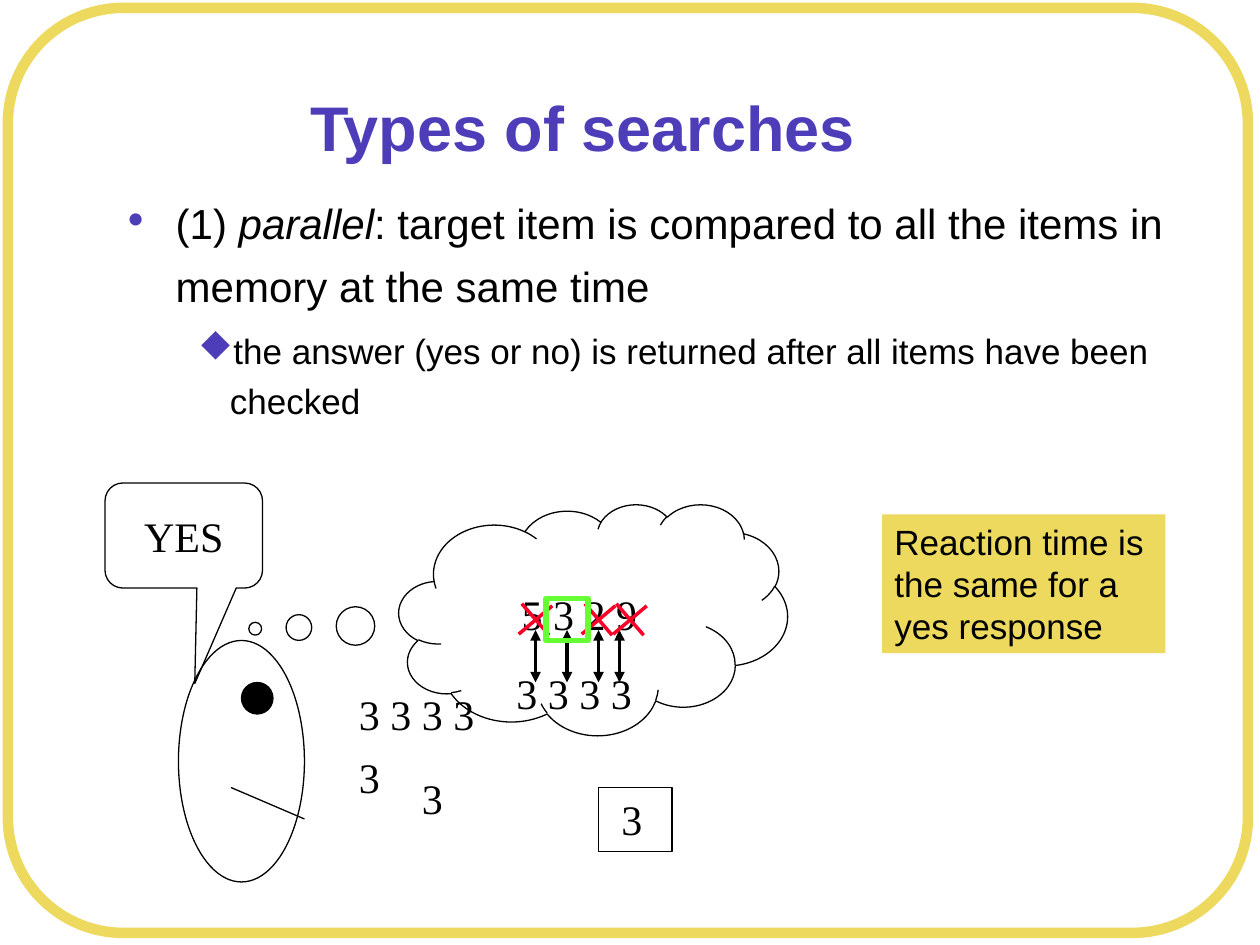
from dataclasses import dataclass

from lxml import etree
from pptx import Presentation
from pptx.dml.color import RGBColor
from pptx.enum.shapes import MSO_CONNECTOR, MSO_SHAPE
from pptx.enum.text import MSO_ANCHOR, MSO_AUTO_SIZE, PP_ALIGN
from pptx.oxml.ns import qn
from pptx.util import Inches, Pt

LEFT, CENTER = PP_ALIGN.LEFT, PP_ALIGN.CENTER
TOP, MIDDLE = MSO_ANCHOR.TOP, MSO_ANCHOR.MIDDLE
RECT, ROUND, OVAL = MSO_SHAPE.RECTANGLE, MSO_SHAPE.ROUNDED_RECTANGLE, MSO_SHAPE.OVAL
CLOUD, SPEECH = MSO_SHAPE.CLOUD_CALLOUT, MSO_SHAPE.ROUNDED_RECTANGULAR_CALLOUT
STRAIGHT = MSO_CONNECTOR.STRAIGHT

SANS, SERIF = "Arial", "Times New Roman"
SIGNS = "Wingdings"
DISC, DIAMOND = "l", "u"  # letters that the symbol font draws as ● and ⬥
COLORS = {
    "black": "000000",
    "gold": "ECD95E",
    "violet": "4E3DB9",
    "red": "FC0128",
    "green": "66FF33",
}

# The slide is a grid of 120 columns by 90 rows
WIDE, HIGH = Inches(10), Inches(7.5)
COLS, ROWS = 120, 90


@dataclass
class Box:
    col: float
    row: float
    cols: float
    rows: float


@dataclass
class Form:
    kind: int
    box: Box
    fill: str | None = None
    line: str | None = "black"
    width: float = 0.75
    adjust: tuple = ()


@dataclass
class Label:
    text: str
    size: int = 24
    font: str = SERIF
    color: str = "black"
    bold: bool = False
    align: int = LEFT
    anchor: int = TOP
    wrap: bool = False
    grow: bool = False
    lines: float = 1.0


@dataclass
class Point:
    runs: tuple  # (text, italic) pairs
    level: int
    size: int
    lines: float
    margin: float
    hang: float
    bullet: str
    share: int


def rgb(name: str) -> RGBColor:
    return RGBColor.from_string(COLORS[name])


def x_at(col: float) -> int:
    return round(WIDE * col / COLS)


def y_at(row: float) -> int:
    return round(HIGH * row / ROWS)


def place(box: Box) -> tuple:
    return x_at(box.col), y_at(box.row), x_at(box.cols), y_at(box.rows)


def draw(slide, form: Form):
    shape = slide.shapes.add_shape(form.kind, *place(form.box))
    shape.shadow.inherit = False
    for i, value in enumerate(form.adjust):
        shape.adjustments[i] = value
    if form.fill:
        shape.fill.solid()
        shape.fill.fore_color.rgb = rgb(form.fill)
    else:
        shape.fill.background()
    if form.line:
        shape.line.color.rgb = rgb(form.line)
        shape.line.width = Pt(form.width)
    else:
        shape.line.fill.background()
    return shape


def write(shape, label: Label) -> None:
    frame = shape.text_frame
    frame.word_wrap = label.wrap
    frame.vertical_anchor = label.anchor
    if label.grow:
        frame.auto_size = MSO_AUTO_SIZE.SHAPE_TO_FIT_TEXT
    para = frame.paragraphs[0]
    para.text, para.alignment = label.text, label.align
    para.line_spacing = label.lines
    font = para.font
    font.name, font.size, font.bold = label.font, Pt(label.size), label.bold
    font.color.rgb = rgb(label.color)


def note(slide, box: Box, label: Label) -> None:
    write(slide.shapes.add_textbox(*place(box)), label)


def join(slide, start: tuple, end: tuple, color: str = "black",
         width: float = 2, heads: bool = False) -> None:
    line = slide.shapes.add_connector(
        STRAIGHT, x_at(start[0]), y_at(start[1]), x_at(end[0]), y_at(end[1]))
    line.line.color.rgb = rgb(color)
    line.line.width = Pt(width)
    props = line._element.spPr
    if heads:
        for tag in ("a:headEnd", "a:tailEnd"):
            etree.SubElement(props.find(qn("a:ln")), qn(tag), type="triangle")
    etree.SubElement(props, qn("a:effectLst"))


def add_point(para, point: Point) -> None:
    for text, slant in point.runs:
        run = para.add_run()
        run.text = text
        run.font.italic = slant
    para.level = point.level
    para.line_spacing = point.lines
    para.space_before = Pt(0.3 * point.size)
    props = para._p.get_or_add_pPr()
    props.set("marL", str(Inches(point.margin)))
    props.set("indent", str(-Inches(point.hang)))
    tint = etree.SubElement(props, qn("a:buClr"))
    etree.SubElement(tint, qn("a:srgbClr"), val=COLORS["violet"])
    etree.SubElement(props, qn("a:buSzPct"), val=str(point.share * 1000))
    etree.SubElement(props, qn("a:buFont"), typeface=SIGNS, charset="2")
    etree.SubElement(props, qn("a:buChar"), char=point.bullet)
    para.font.name, para.font.size = SANS, Pt(point.size)
    para.font.color.rgb = rgb("black")


POINTS = (
    Point((("(1) ", False), ("parallel", True),
           (": target item is compared to all the items in memory at the same time", False)),
          0, 24, 1.25, 0.38, 0.38, DISC, 50),
    Point((("the answer (yes or no) is returned after all items have been checked", False),),
          1, 20, 1.2, 0.81, 0.25, DIAMOND, 100),
)


def main() -> None:
    deck = Presentation()
    deck.slide_width, deck.slide_height = WIDE, HIGH
    slide = deck.slides.add_slide(deck.slide_layouts[6])

    # Frame and thought cloud
    draw(slide, Form(ROUND, Box(0.75, 0.75, 118.1, 88.1), None, "gold", 6, (0.125,)))
    cloud = draw(slide, Form(CLOUD, Box(38, 48, 37, 22), adjust=(-0.87, 0.04)))
    write(cloud, Label("5 3 2 9", align=CENTER, anchor=MIDDLE))

    # Title and points
    note(slide, Box(11, 5, 89, 15),
         Label("Types of searches", 36, SANS, "violet", True, CENTER, MIDDLE, True,
               lines=0.9))
    frame = slide.shapes.add_textbox(*place(Box(11, 17, 103, 24.2))).text_frame
    frame.word_wrap = True
    for i, point in enumerate(POINTS):
        add_point(frame.add_paragraph() if i else frame.paragraphs[0], point)

    # Head with eye and mouth
    draw(slide, Form(OVAL, Box(17, 61, 12, 23)))
    draw(slide, Form(OVAL, Box(23, 65, 3, 3), "black"))
    join(slide, (22, 75), (29, 78), width=0.75)

    # Target card and the digits on their way to memory
    card = draw(slide, Form(RECT, Box(57, 75, 7, 6.1)))
    write(card, Label(" 3", wrap=True, grow=True))
    for col, row, text in ((39, 73, "3"), (33, 65, "3 3 3 3"),
                           (48, 63, "3 3 3 3"), (33, 71, "3")):
        note(slide, Box(col, row, 13.4 if len(text) > 1 else 4.4, 6),
             Label(text, grow=True))

    # Comparison arrows
    for col in (51, 54, 57, 59):
        join(slide, (col, 60), (col, 65), heads=True)

    # Answer and remark
    speech = draw(slide, Form(SPEECH, Box(10, 46, 15, 10), adjust=(0.07, 1.41, 0.17)))
    write(speech, Label("YES", align=CENTER, anchor=MIDDLE))
    remark = draw(slide, Form(RECT, Box(84, 49, 27, 13.2), "gold", None))
    write(remark, Label("Reaction time is the same for a yes response", 20, SANS,
                        wrap=True, grow=True))

    # Crossed-out digits and the match
    for col in (51, 57, 60):
        join(slide, (col - 1.3, 57.5), (col + 1.3, 60.5), "red")
        join(slide, (col - 1.6, 60.4), (col + 1.6, 57.7), "red")
    draw(slide, Form(RECT, Box(52, 57, 4, 4), None, "green", 3))

    deck.save("out.pptx")


if __name__ == "__main__":
    main()
